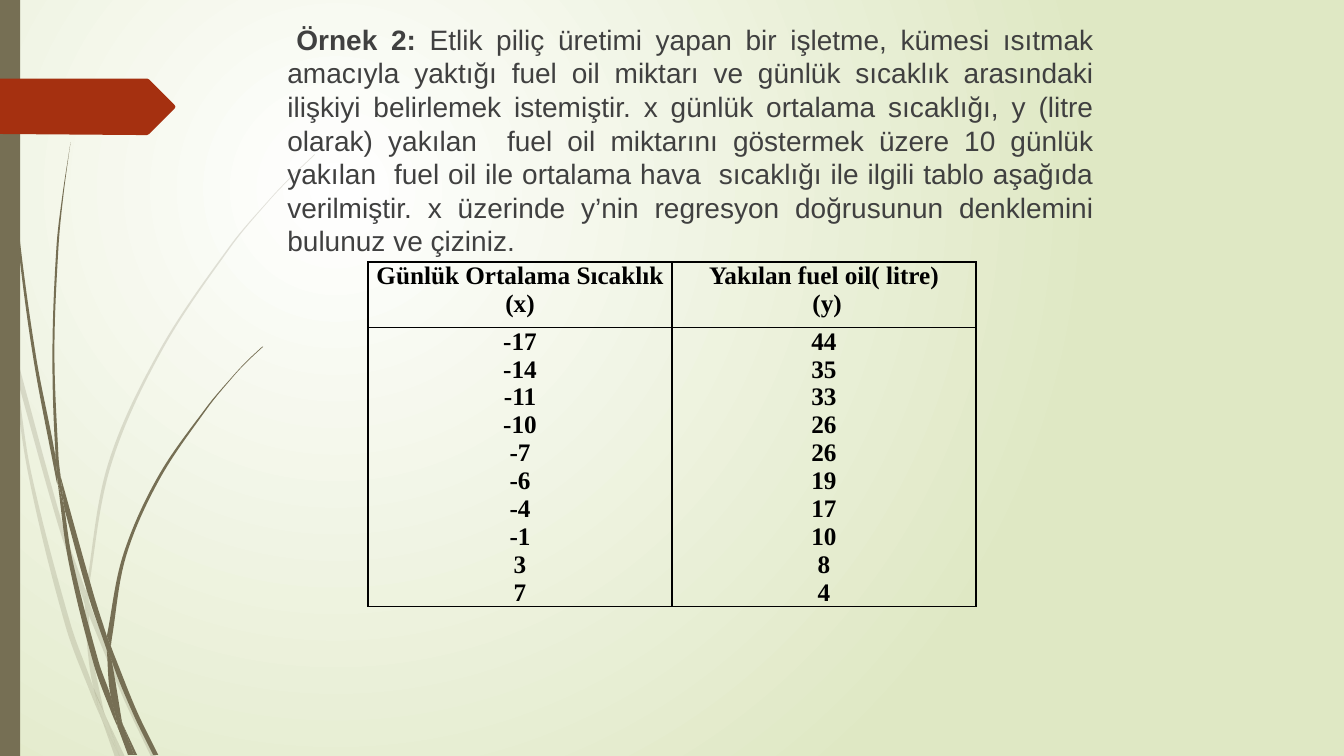
from math import dist
from lxml import etree
from pptx import Presentation
from pptx.dml.color import RGBColor
from pptx.enum.text import MSO_ANCHOR, MSO_AUTO_SIZE, PP_ALIGN
from pptx.enum.shapes import MSO_SHAPE
from pptx.oxml.ns import qn
from pptx.util import Pt

PX = 9144  # 100 px to the inch
TOP, NO_FIT = MSO_ANCHOR.TOP, MSO_AUTO_SIZE.NONE
JUSTIFY, CENTER = PP_ALIGN.JUSTIFY, PP_ALIGN.CENTER
RECTANGLE = MSO_SHAPE.RECTANGLE
COLORS = {"glow": "FFFFFF", "meadow": "DFE8C4", "stalk": "766F54",
          "tag": "A53010", "body": "404040", "table": "000000"}

# Each stalk piece: one edge, then the edge that leads back
PALE_STALKS = [
    ([(11, 350), (9, 322), (0, 282)], [(0, 299), (10, 344)]),
    ([(17, 376), (58, 522), (84, 599)], [(85, 586), (62, 520), (14, 345)]),
    ([(88, 610), (123, 694), (150, 751)],
     [(155, 751), (127, 692), (92, 607), (88, 596)]),
    ([(119, 751), (124, 751)], [(105, 711)]),
    ([(11, 350), (28, 470), (65, 621), (92, 693), (101, 714)],
     [(99, 707), (93, 683), (70, 619), (31, 469), (17, 376)]),
    ([(84, 599), (87, 646), (93, 683), (105, 711)],
     [(103, 706), (91, 646), (88, 610)]),
    ([(85, 586), (107, 461), (158, 348), (228, 244), (268, 197), (289, 175), (312, 153)],
     [(312, 154), (290, 175), (268, 198), (229, 245), (160, 349), (110, 462), (88, 584),
      (88, 596)]),
    ([(101, 714), (114, 751)], [(119, 751)]),
    ([(84, 599), (85, 586)], [(88, 596), (88, 610)]),
    ([(93, 683), (105, 711), (119, 751)], [(101, 714), (99, 707)]),
]
DARK_STALKS = [
    ([(3, 0), (4, 48), (7, 110), (17, 233), (33, 355), (56, 477)],
     [(57, 481), (55, 453), (36, 355), (19, 232), (8, 109), (5, 48), (4, 0)]),
    ([(64, 505), (88, 592), (106, 645)], [(106, 631), (93, 590), (60, 472)]),
    ([(110, 641), (111, 656), (132, 708), (152, 749)],
     [(157, 749), (136, 706), (113, 649)]),
    ([(57, 477), (68, 557), (93, 659), (111, 708), (117, 722)],
     [(116, 717), (110, 691), (98, 657), (72, 556), (64, 505)]),
    ([(60, 472), (58, 453), (54, 349), (58, 245), (63, 193), (70, 141)],
     [(70, 141), (62, 193), (56, 245), (52, 349), (55, 449), (60, 472)]),
    ([(133, 749), (136, 749)], [(122, 719)]),
    ([(57, 477), (64, 505)], [(60, 472), (55, 449), (55, 453)]),
    ([(106, 631), (122, 551), (156, 474), (204, 405), (231, 373), (245, 358), (260, 344)],
     [(261, 344), (245, 359), (231, 374), (205, 406), (158, 476), (125, 552), (111, 633),
      (110, 641)]),
    ([(117, 722), (127, 749)], [(131, 749)]),
    ([(106, 645), (110, 691), (122, 719)], [(121, 716), (111, 656), (109, 651)]),
    ([(106, 645), (111, 656)], [(110, 641), (106, 631)]),
    ([(110, 691), (116, 717), (117, 722), (130, 749)],
     [(133, 749), (122, 719), (116, 706)]),
]
TAG_CORNERS = [(0, 0), (146, 0), (148, 1), (173, 26), (174, 28), (173, 30),
               (148, 55), (146, 56), (136, 56), (0, 55)]

PROBLEM_LABEL = "Örnek 2:"
PROBLEM = (
    " Etlik piliç üretimi yapan bir işletme, kümesi ısıtmak amacıyla yaktığı fuel oil "
    "miktarı ve günlük sıcaklık arasındaki ilişkiyi belirlemek istemiştir. x günlük "
    "ortalama sıcaklığı, y (litre olarak) yakılan  fuel oil miktarını göstermek üzere "
    "10 günlük yakılan  fuel oil ile ortalama hava  sıcaklığı ile ilgili tablo aşağıda "
    "verilmiştir. x üzerinde y’nin regresyon doğrusunun denklemini bulunuz ve çiziniz.")
HEADERS = [["Günlük Ortalama Sıcaklık (x)"], ["Yakılan fuel oil( litre)", " (y)"]]
TEMPERATURES = [-17, -14, -11, -10, -7, -6, -4, -1, 3, 7]
LITRES = [44, 35, 33, 26, 26, 19, 17, 10, 8, 4]


def rgb(name):
    return RGBColor.from_string(COLORS[name])


def paint(shape, color):
    shape.shadow.inherit = False
    shape.fill.solid()
    shape.fill.fore_color.rgb = rgb(color)
    shape.line.fill.background()


def draw_outline(shapes, left, top, points, color):
    corners = [((left + x) * PX, (top + y) * PX) for x, y in points]
    builder = shapes.build_freeform(*corners[0], scale=1.0)
    builder.add_line_segments(corners[1:], close=True)
    shape = builder.convert_to_shape()
    paint(shape, color)
    return shape


def edge_curves(edge):
    """Two handles and an end for each step along a smooth edge."""
    padded = [edge[0], *edge, edge[-1]]
    for before, start, end, after in zip(padded, padded[1:], padded[2:], padded[3:]):
        reach = dist(start, end) / 3
        leave, arrive = reach / dist(before, end), reach / dist(start, after)
        yield ([s + (e - b) * leave for b, s, e in zip(before, start, end)],
               [e - (a - s) * arrive for s, e, a in zip(start, end, after)],
               end)


def bend(shape, left, top, edge, back):
    """Turns the straight steps of both edges into curves."""
    lines = list(shape.element.iter(qn("a:lnTo")))
    steps = [*edge_curves(edge), None, *edge_curves(back)]
    for line, step in zip(lines, steps):
        if step is None:
            continue
        curve = etree.Element(qn("a:cubicBezTo"))
        for x, y in step:
            etree.SubElement(curve, qn("a:pt"),
                             x=str(round((left + x) * PX - shape.left)),
                             y=str(round((top + y) * PX - shape.top)))
        line.getparent().replace(line, curve)


def draw_background(slide):
    fill = slide.background.fill
    fill.gradient()
    for stop, color in zip(fill.gradient_stops, ("glow", "meadow")):
        stop.color.rgb = rgb(color)
    gradient = slide.element.find(".//" + qn("a:gradFill"))
    gradient.remove(gradient.find(qn("a:lin")))
    circle = etree.SubElement(gradient, qn("a:path"), path="circle")
    etree.SubElement(circle, qn("a:fillToRect"), l="50000", t="50000",
                     r="100000", b="100000")


def draw_stalks(slide, left, top, stalks, opacity=100):
    group = slide.shapes.add_group_shape()
    for edge, back in stalks:
        shape = draw_outline(group.shapes, left, top, edge + back, "stalk")
        bend(shape, left, top, edge, back)
        if opacity < 100:
            color = shape.element.spPr.find(qn("a:solidFill"))[0]
            etree.SubElement(color, qn("a:alpha"), val=str(opacity * 1000))


def draw_side_bar(slide, left, top, width, height):
    bar = slide.shapes.add_shape(RECTANGLE, left * PX, top * PX, width * PX, height * PX)
    paint(bar, "stalk")


def fill_problem(slide, left, top, width, height):
    body = slide.placeholders[1]
    body.element.getparent().append(body.element)  # in front of the stalks
    body.left, body.top, body.width, body.height = (
        left * PX, top * PX, width * PX, height * PX)
    frame = body.text_frame
    frame.auto_size, frame.vertical_anchor, frame.word_wrap = NO_FIT, TOP, True
    paragraph = frame.paragraphs[0]
    for text, bold in ((PROBLEM_LABEL, True), (PROBLEM, False)):
        run = paragraph.add_run()
        run.text, run.font.bold = text, bold
        run.font.name, run.font.size = "Arial", Pt(20)
        run.font.color.rgb = rgb("body")
    paragraph.alignment = JUSTIFY
    paragraph.space_before = Pt(10)
    properties = paragraph._p.get_or_add_pPr()
    properties.set("marL", "0")
    properties.set("indent", str(9 * PX))
    etree.SubElement(properties, qn("a:buNone"))


def fill_cell(cell, lines):
    cell.margin_left = cell.margin_right = 5 * PX
    cell.margin_top = cell.margin_bottom = 0
    cell.text = "\n".join(map(str, lines))
    for paragraph in cell.text_frame.paragraphs:
        paragraph.alignment = CENTER
        font = paragraph.font
        font.name, font.size, font.bold = "Times New Roman", Pt(18), True
        font.color.rgb = rgb("table")
    properties = cell._tc.get_or_add_tcPr()
    for side in ("a:lnL", "a:lnR", "a:lnT", "a:lnB"):
        line = etree.SubElement(properties, qn(side), w=str(Pt(1)))
        solid = etree.SubElement(line, qn("a:solidFill"))
        etree.SubElement(solid, qn("a:srgbClr"), val=COLORS["table"])
    cell.fill.background()


def draw_table(slide, left, top, width, height, header_height):
    table = slide.shapes.add_table(
        2, 2, left * PX, top * PX, width * PX, height * PX).table
    table.first_row = table.horz_banding = False
    table.rows[0].height = header_height * PX
    table.rows[1].height = (height - header_height) * PX
    for row, contents in enumerate((HEADERS, [TEMPERATURES, LITRES])):
        for column, lines in enumerate(contents):
            fill_cell(table.cell(row, column), lines)


def main():
    presentation = Presentation()
    presentation.slide_width, presentation.slide_height = 1333 * PX, 750 * PX
    slide = presentation.slides.add_slide(presentation.slide_layouts[1])
    title = slide.shapes.title.element
    title.getparent().remove(title)

    draw_background(slide)
    draw_stalks(slide, 0, 0, PALE_STALKS, opacity=20)
    draw_stalks(slide, 0, 0, DARK_STALKS)
    draw_side_bar(slide, 0, 0, 20, 750)
    draw_outline(slide.shapes, 0, 78, TAG_CORNERS, "tag")
    fill_problem(slide, 275, 17, 820, 225)
    draw_table(slide, 365, 260, 603, 342, header_height=65)
    presentation.save("out.pptx")


if __name__ == "__main__":
    main()
